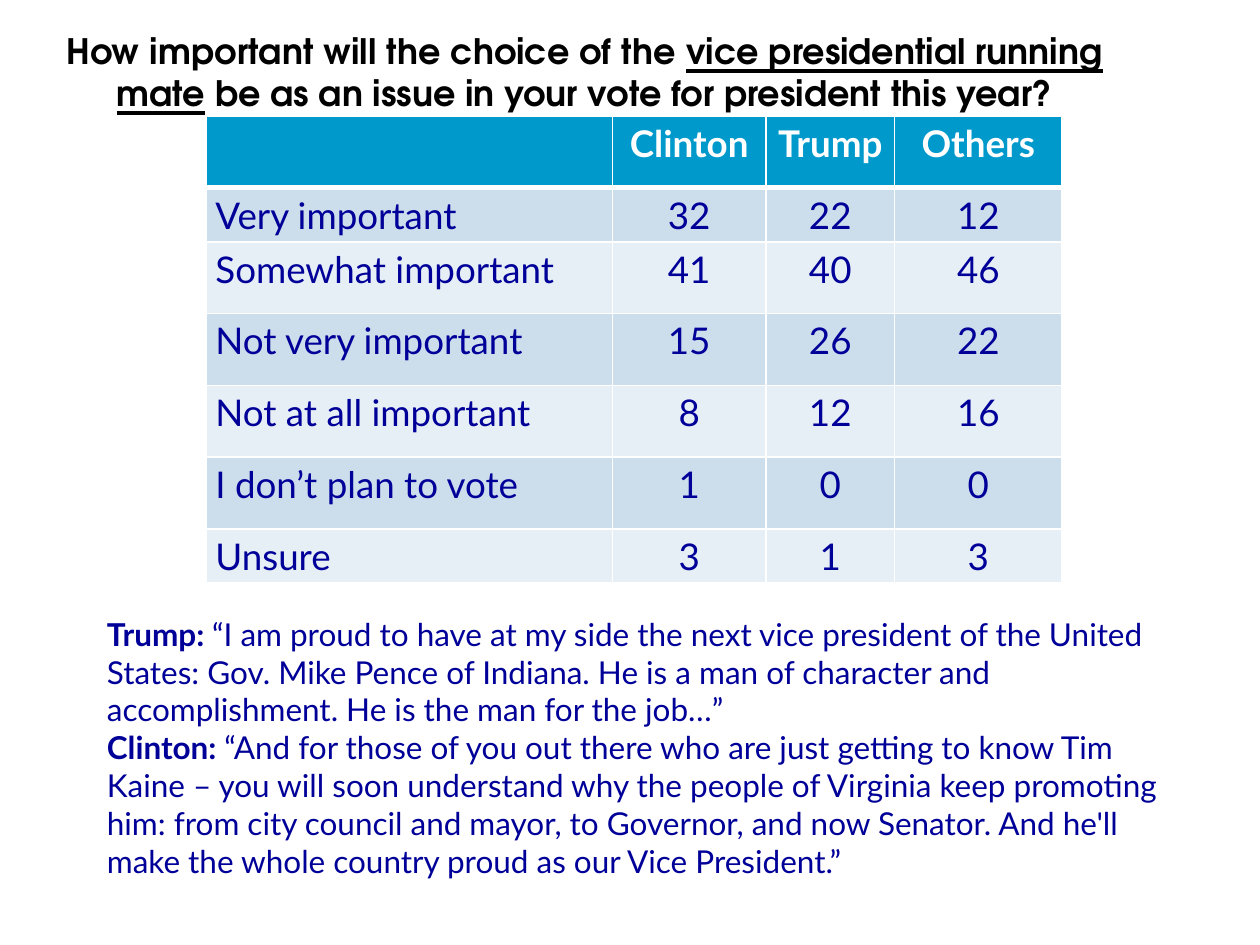
from dataclasses import dataclass

from lxml.etree import SubElement
from pptx import Presentation
from pptx.dml.color import RGBColor
from pptx.enum.text import MSO_ANCHOR as Anchor, MSO_AUTO_SIZE as AutoSize, PP_ALIGN as Align
from pptx.oxml.ns import qn
from pptx.util import Inches, Pt


@dataclass(frozen=True)
class Theme:
    title_font: str = "TeX Gyre Adventor"
    body_font: str = "Lato"
    title_size: int = 20
    table_size: int = 21
    quote_size: int = 18
    black: str = "000000"
    white: str = "FFFFFF"
    navy: str = "000099"
    header: str = "0099CC"
    bands: tuple = ("CCDEEC", "E7EFF6")


THEME = Theme()

TITLE = [
    ("How important will the choice of the ", False),
    ("vice presidential running mate", True),
    (" be as an issue in your vote for president this year?", False),
]
RESULTS = [
    ("", "Clinton", "Trump", "Others"),
    ("Very important", 32, 22, 12),
    ("Somewhat important", 41, 40, 46),
    ("Not very important", 15, 26, 22),
    ("Not at all important", 8, 12, 16),
    ("I don’t plan to vote", 1, 0, 0),
    ("Unsure", 3, 1, 3),
]
COLUMN_WIDTHS = [3.22, 1.22, 1.02, 1.33]
ROW_HEIGHTS = [0.57, 0.31, 0.57, 0.57, 0.57, 0.57, 0.31]
QUOTES = [
    ("Trump: ", "“I am proud to have at my side the next vice president of the United "
     "States: Gov. Mike Pence of Indiana. He is a man of character and "
     "accomplishment. He is the man for the job…”"),
    ("Clinton: ", "“And for those of you out there who are just getting to know Tim "
     "Kaine – you will soon understand why the people of Virginia keep promoting "
     "him: from city council and mayor, to Governor, and now Senator. And he'll "
     "make the whole country proud as our Vice President.”"),
]


def format_font(font, name, size, color, bold=False):
    font.name = name
    font.size = Pt(size)
    font.bold = bold
    font.color.rgb = RGBColor.from_string(color)


def add_run(paragraph, text):
    run = paragraph.add_run()
    run.text = text
    return run


def set_borders(cell, bottom_width):
    properties = cell._tc.get_or_add_tcPr()
    widths = {"a:lnL": 1, "a:lnR": 1, "a:lnT": 1, "a:lnB": bottom_width}
    for position, (tag, width) in enumerate(widths.items()):
        line = SubElement(properties, qn(tag), w=str(Pt(width)))
        fill = SubElement(line, qn("a:solidFill"))
        SubElement(fill, qn("a:srgbClr"), val=THEME.white)
        properties.insert(position, line)


def place_title(slide, left, top, width, height):
    title = slide.shapes.title
    title.left, title.top, title.width, title.height = left, top, width, height
    frame = title.text_frame
    frame.auto_size = AutoSize.NONE
    frame.word_wrap = True
    frame.vertical_anchor = Anchor.BOTTOM
    frame.margin_bottom = Inches(0.43)
    paragraph = frame.paragraphs[0]
    paragraph.alignment = Align.CENTER
    for text, underlined in TITLE:
        font = add_run(paragraph, text).font
        format_font(font, THEME.title_font, THEME.title_size, THEME.black, True)
        font.underline = underlined


def fill_cell(cell, value, row, column):
    is_header = row == 0
    cell.margin_left = cell.margin_right = Inches(0.07)
    cell.margin_top = cell.margin_bottom = Inches(0.04)
    cell.fill.solid()
    background = THEME.header if is_header else THEME.bands[(row - 1) % 2]
    cell.fill.fore_color.rgb = RGBColor.from_string(background)
    set_borders(cell, 3 if is_header else 1)
    cell.text_frame.text = str(value)
    paragraph = cell.text_frame.paragraphs[0]
    paragraph.alignment = Align.CENTER if column else Align.LEFT
    color = THEME.white if is_header else THEME.navy
    for run in paragraph.runs:
        format_font(run.font, THEME.body_font, THEME.table_size, color, is_header)


def place_results(slide, left, top, width, height):
    table = slide.shapes.add_table(
        len(RESULTS), len(COLUMN_WIDTHS), left, top, width, height).table
    for column, column_width in zip(table.columns, COLUMN_WIDTHS):
        column.width = Inches(column_width)
    for table_row, row_height in zip(table.rows, ROW_HEIGHTS):
        table_row.height = Inches(row_height)
    for row, values in enumerate(RESULTS):
        for column, value in enumerate(values):
            fill_cell(table.cell(row, column), value, row, column)


def place_quotes(slide, left, top, width, height):
    frame = slide.shapes.add_textbox(left, top, width, height).text_frame
    frame.word_wrap = True
    frame.auto_size = AutoSize.SHAPE_TO_FIT_TEXT
    for index, quote in enumerate(QUOTES):
        paragraph = frame.add_paragraph() if index else frame.paragraphs[0]
        for text, bold in zip(quote, (True, False)):
            run = add_run(paragraph, text)
            format_font(run.font, THEME.body_font, THEME.quote_size, THEME.navy, bold)


def main():
    presentation = Presentation()
    presentation.slide_width = Inches(10)
    presentation.slide_height = Inches(7.5)
    slide = presentation.slides.add_slide(presentation.slide_layouts[5])
    place_title(slide, Inches(0.33), Inches(0.5), Inches(8.62), Inches(0.83))
    place_results(slide, Inches(1.64), Inches(0.92), Inches(6.79), Inches(3.72))
    place_quotes(slide, Inches(0.75), Inches(4.83), Inches(8.71), Inches(2.22))
    presentation.save("out.pptx")


if __name__ == "__main__":
    main()
